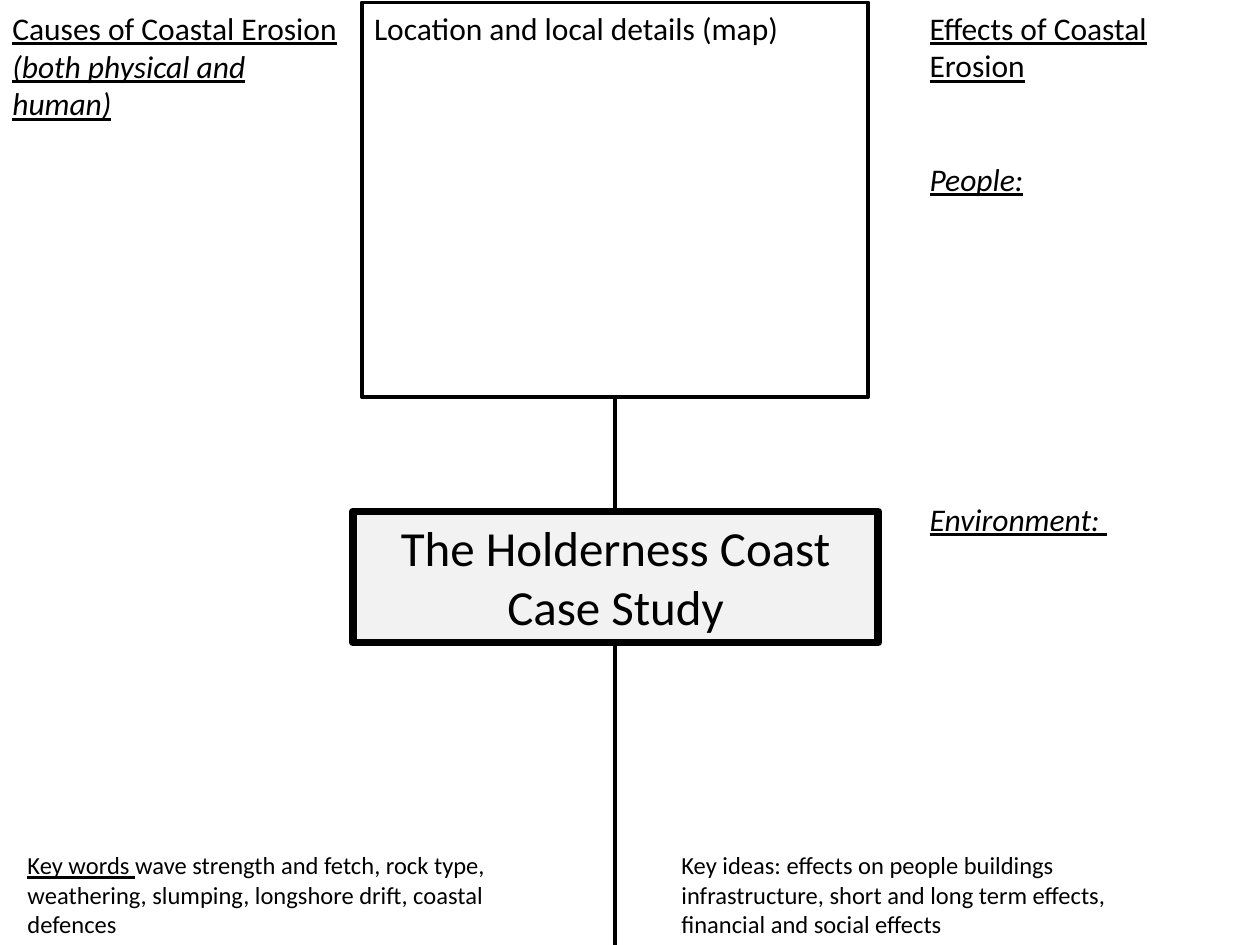
"""Builds a one-slide case study organiser for the Holderness Coast."""
from pptx import Presentation, util as u
from pptx.dml.color import RGBColor
from pptx.enum import shapes, text
from pptx.oxml.ns import qn
from lxml import etree

COLORS = {"ink": "000000", "panel": "F2F2F2"}
FONT = "Calibri"
AXIS = 4.88


class Organiser:
    """Holds the style and the current slide."""

    def __init__(self, prs):
        self.s = prs.slides.add_slide(prs.slide_layouts[5])

    def color(self, name):
        return RGBColor.from_string(COLORS[name])

    def place(self, sp, box):
        sp.left, sp.top, sp.width, sp.height = map(u.Inches, box)

    def outline(self, sp, width):
        sp.line.color.rgb = self.color("ink")
        sp.line.width = u.Pt(width)

    def fill_text(self, sp, paragraphs, size, align=text.PP_ALIGN.LEFT):
        """Add paragraphs given as (gap before, [(words, underline, italic)])."""
        tf = sp.text_frame
        tf.word_wrap = True
        tf.auto_size = text.MSO_AUTO_SIZE.NONE
        tf.vertical_anchor = text.MSO_ANCHOR.TOP
        for i, (gap, runs) in enumerate(paragraphs):
            p = tf.paragraphs[0] if i == 0 else tf.add_paragraph()
            p.alignment = align
            p.space_before = u.Pt(gap)
            p.font.name, p.font.size = FONT, u.Pt(size)
            p.font.color.rgb = self.color("ink")
            for words, underline, italic in runs:
                r = p.add_run()
                r.text = words
                r.font.underline, r.font.italic = underline, italic

    def title(self, words, box):
        sp = self.s.shapes.title
        self.place(sp, box)
        sp.fill.solid()
        sp.fill.fore_color.rgb = self.color("panel")
        self.outline(sp, 4.5)
        self.fill_text(sp, [(0, [(words, False, False)])], 28, text.PP_ALIGN.CENTER)

    def frame(self, words, box):
        sp = self.s.shapes.add_shape(shapes.MSO_SHAPE.RECTANGLE, *map(u.Inches, box))
        sp.shadow.inherit = False
        sp.fill.background()
        self.outline(sp, 2.25)
        self.fill_text(sp, [(0, [(words, False, False)])], 18)

    def note(self, paragraphs, box, size=18):
        sp = self.s.shapes.add_textbox(*map(u.Inches, box))
        self.fill_text(sp, paragraphs, size)

    def stem(self, top, bottom):
        ends = map(u.Inches, (AXIS, top, AXIS, bottom))
        sp = self.s.shapes.add_connector(shapes.MSO_CONNECTOR.STRAIGHT, *ends)
        self.outline(sp, 2)
        etree.SubElement(sp._element.spPr, qn("a:effectLst"))


def main():
    prs = Presentation()
    prs.slide_width, prs.slide_height = u.Inches(10), u.Inches(7.5)
    page = Organiser(prs)
    page.title("The Holderness Coast Case Study", (2.8, 4.06, 4.17, 1.04))
    page.frame("Location and local details (map)", (2.87, 0.02, 4.02, 3.13))
    page.note([(0, [("Causes of Coastal Erosion ", True, False),
                    ("(both physical and human)", True, True)])],
              (0, 0.02, 2.8, 1.01))
    page.note([(0, [("Effects of Coastal Erosion", True, False)]),
               (43, [("People:", True, True)]),
               (173, [("Environment: ", True, True)])],
              (7.28, 0.02, 2.2, 4.34))
    for top, bottom in ((3.15, 4.06), (5.11, 7.5)):
        page.stem(top, bottom)
    key_words = [("Key words ", True, False),
                 ("wave strength and fetch, rock type, weathering, slumping, "
                  "longshore drift, coastal defences", False, False)]
    key_ideas = [("Key ideas: effects on people buildings infrastructure, short and "
                  "long term effects, financial and social effects", False, False)]
    for left, runs in ((0.12, key_words), (5.31, key_ideas)):
        page.note([(0, runs)], (left, 6.7, 4.17, 0.81), 14)
    prs.save("out.pptx")


if __name__ == "__main__":
    main()
